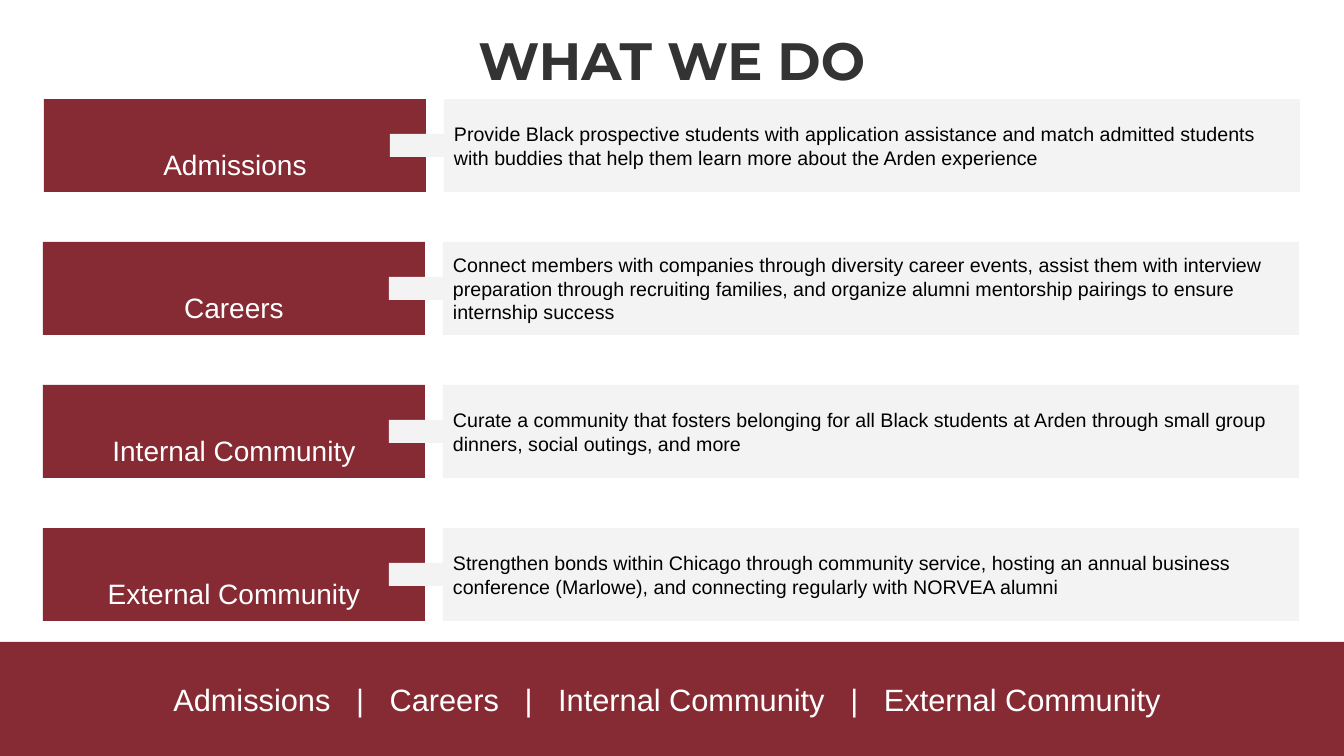
from dataclasses import dataclass

from pptx import Presentation
from pptx.dml.color import RGBColor
from pptx.enum.shapes import MSO_SHAPE
from pptx.enum.text import MSO_ANCHOR, MSO_AUTO_SIZE, PP_ALIGN
from pptx.util import Emu, Pt

SCALE = 914400 / 100.8
WIDTH, HEIGHT = 1344, 756
FIRST_TOP, PITCH, ROW_HEIGHT = 99, 143, 93


@dataclass(frozen=True)
class Theme:
    maroon: str = "862A33"
    grey: str = "F3F3F3"
    heading: str = "333333"
    ink: str = "000000"
    white: str = "FFFFFF"
    title_font: str = "Montserrat"
    body_font: str = "Arial"
    title_size: float = 37.5
    footer_size: float = 22
    label_size: float = 20
    text_size: float = 14


T = Theme()

ROWS = [
    ("Admissions",
     "Provide Black prospective students with application assistance and match "
     "admitted students with buddies that help them learn more about the Arden experience"),
    ("Careers",
     "Connect members with companies through diversity career events, assist them with "
     "interview preparation through recruiting families, and organize alumni mentorship "
     "pairings to ensure internship success"),
    ("Internal Community",
     "Curate a community that fosters belonging for all Black students at Arden through "
     "small group dinners, social outings, and more"),
    ("External Community",
     "Strengthen bonds within Chicago through community service, hosting an annual "
     "business conference (Marlowe), and connecting regularly with NORVEA alumni"),
]


def px(n):
    return Emu(round(n * SCALE))


def add_run(p, text, size, color, font=T.body_font, bold=False, spacing=None):
    r = p.add_run()
    r.text = text
    r.font.name = font
    r.font.size = Pt(size)
    r.font.bold = bold
    r.font.color.rgb = RGBColor.from_string(color)
    if spacing:
        r._r.get_or_add_rPr().set("spc", str(spacing))


def set_frame(sp, insets, align, anchor=MSO_ANCHOR.TOP):
    tf = sp.text_frame
    tf.word_wrap = True
    tf.auto_size = MSO_AUTO_SIZE.NONE
    tf.vertical_anchor = anchor
    tf.margin_left, tf.margin_top, tf.margin_right, tf.margin_bottom = map(px, insets)
    p = tf.paragraphs[0]
    p.alignment = align
    return p


def add_box(s, x, y, w, h, color):
    sp = s.shapes.add_shape(MSO_SHAPE.RECTANGLE, px(x), px(y), px(w), px(h))
    sp.shadow.inherit = False
    sp.fill.solid()
    sp.fill.fore_color.rgb = RGBColor.from_string(color)
    sp.line.fill.background()
    return sp


def add_title(s, text):
    sp = s.shapes.title
    sp.left, sp.top, sp.width, sp.height = px(0), px(17), px(WIDTH), px(62)
    p = set_frame(sp, (0, 0, 0, 0), PP_ALIGN.CENTER)
    p.line_spacing = 1.18
    add_run(p, text, T.title_size, T.heading, T.title_font, True)


def add_row(s, x, y, label, text):
    sp = add_box(s, x, y, 382, ROW_HEIGHT, T.maroon)
    p = set_frame(sp, (0, 48, 0, 0), PP_ALIGN.CENTER)
    add_run(p, label, T.label_size, T.white)
    add_box(s, x + 346, y + 35, 88, 23, T.grey)
    sp = add_box(s, x + 400, y, 856, ROW_HEIGHT, T.grey)
    p = set_frame(sp, (10, 10, 10, 10), PP_ALIGN.LEFT, MSO_ANCHOR.MIDDLE)
    add_run(p, text, T.text_size, T.ink)


def add_footer(s, labels):
    top = 642
    sp = add_box(s, 0, top, WIDTH, HEIGHT - top, T.maroon)
    p = set_frame(sp, (10, 39, 20, 10), PP_ALIGN.CENTER)
    for i, label in enumerate(labels):
        if i:
            add_run(p, " |", T.footer_size, T.white, spacing=1220)
            add_run(p, " ", T.footer_size, T.white)
        add_run(p, label, T.footer_size, T.white)


def main():
    prs = Presentation()
    prs.slide_width, prs.slide_height = px(WIDTH), px(HEIGHT)
    s = prs.slides.add_slide(prs.slide_layouts[5])
    add_title(s, "WHAT WE DO")
    for i, (label, text) in enumerate(ROWS):
        add_row(s, 43 if i else 44, FIRST_TOP + i * PITCH, label, text)
    add_footer(s, [label for label, _ in ROWS])
    prs.save("out.pptx")


if __name__ == "__main__":
    main()
